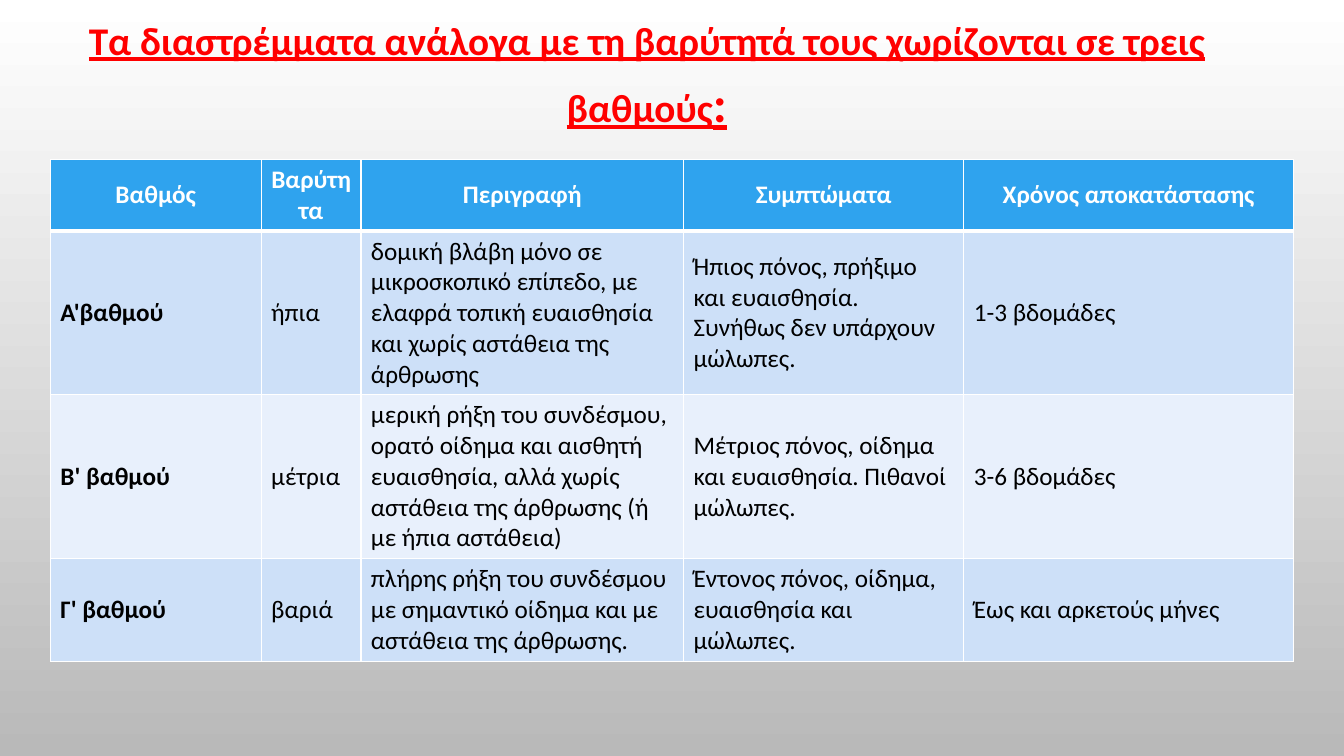
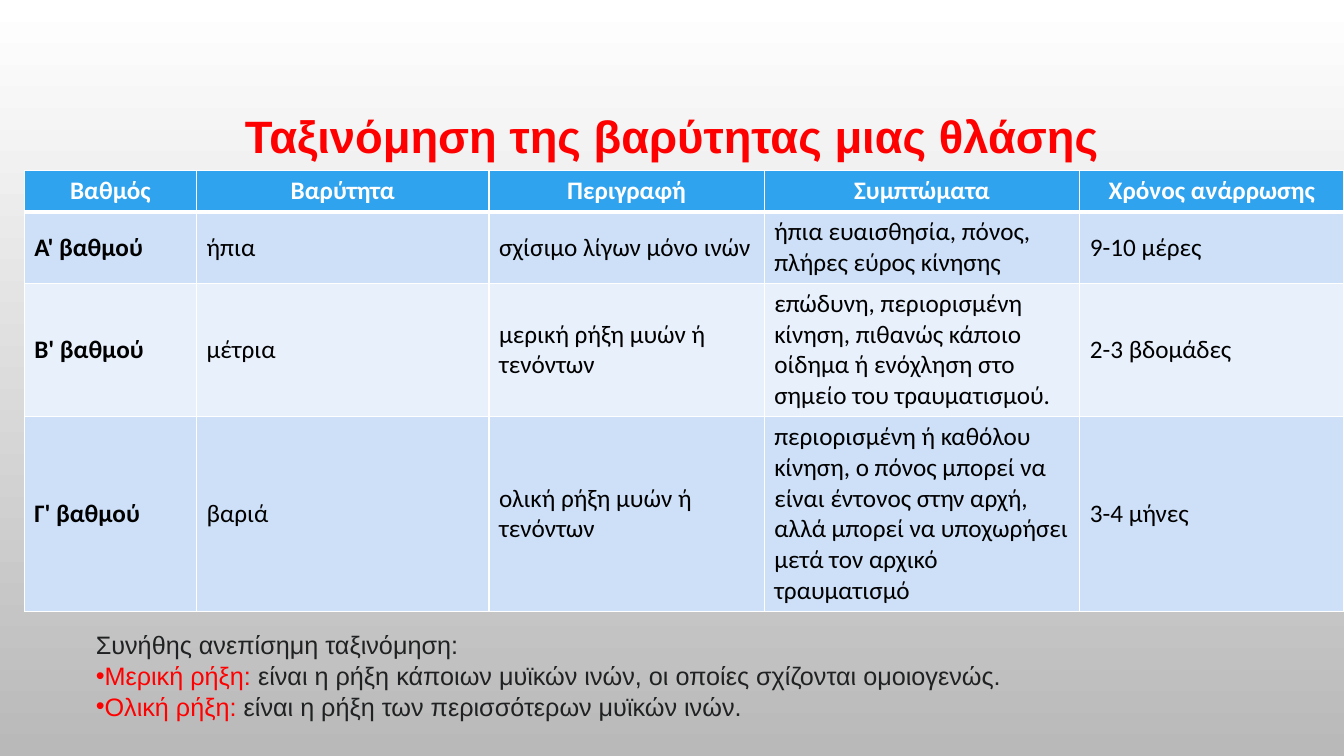
"""Build two slides that grade sprains and strains by severity."""
from lxml.etree import SubElement
from pptx import Presentation
from pptx.dml.color import RGBColor
from pptx.enum.text import MSO_ANCHOR, MSO_AUTO_SIZE, PP_ALIGN
from pptx.oxml.ns import qn
from pptx.util import Inches, Pt

WIDTH, HEIGHT = Inches(13.33), Inches(7.5)
COLOURS = {
    "red": "FF0000", "white": "FFFFFF", "black": "000000", "ink": "202122",
    "grey": "B9B9B9", "header": "2FA3EE", "odd": "CDE0F8", "even": "E8F0FC",
}
ROW_HEIGHT = 5.47
SPRAIN_COLUMNS = (2.09, 0.99, 3.2, 2.78, 3.27)
SPRAIN_ROWS = (
    ("Βαθμός", "Βαρύτητα", "Περιγραφή", "Συμπτώματα", "Χρόνος αποκατάστασης"),
    ("Α'βαθμού", "ήπια",
     "δομική βλάβη μόνο σε μικροσκοπικό επίπεδο, με ελαφρά τοπική ευαισθησία "
     "και χωρίς αστάθεια της άρθρωσης",
     "Ήπιος πόνος, πρήξιμο και ευαισθησία. Συνήθως δεν υπάρχουν μώλωπες.",
     "1-3 βδομάδες"),
    ("Β' βαθμού", "μέτρια",
     "μερική ρήξη του συνδέσμου, ορατό οίδημα και αισθητή ευαισθησία, αλλά "
     "χωρίς αστάθεια της άρθρωσης (ή με ήπια αστάθεια)",
     "Μέτριος πόνος, οίδημα και ευαισθησία. Πιθανοί μώλωπες.",
     "3-6 βδομάδες"),
    ("Γ' βαθμού", "βαριά",
     "πλήρης ρήξη του συνδέσμου με σημαντικό οίδημα και με αστάθεια της άρθρωσης.",
     "Έντονος πόνος, οίδημα, ευαισθησία και μώλωπες.",
     "Έως και αρκετούς μήνες"),
)
STRAIN_COLUMNS = (1.71, 2.9, 2.73, 3.13, 2.62)
STRAIN_ROWS = (
    ("Βαθμός", "Βαρύτητα", "Περιγραφή", "Συμπτώματα", "Χρόνος ανάρρωσης"),
    ("Α' βαθμού", "ήπια", "σχίσιμο λίγων μόνο ινών",
     "ήπια ευαισθησία, πόνος, πλήρες εύρος κίνησης", "9-10 μέρες"),
    ("Β' βαθμού", "μέτρια", "μερική ρήξη μυών ή τενόντων",
     "επώδυνη, περιορισμένη κίνηση, πιθανώς κάποιο οίδημα ή ενόχληση στο "
     "σημείο του τραυματισμού.", "2-3 βδομάδες"),
    ("Γ' βαθμού", "βαριά", "ολική ρήξη μυών ή τενόντων",
     "περιορισμένη ή καθόλου κίνηση, ο πόνος μπορεί να είναι έντονος στην "
     "αρχή, αλλά μπορεί να υποχωρήσει μετά τον αρχικό τραυματισμό",
     "3-4 μήνες"),
)
NOTES = (
    (("Συνήθης ανεπίσημη ταξινόμηση:", "ink"),),
    (("Μερική ρήξη: ", "red"),
     ("είναι η ρήξη κάποιων μυϊκών ινών, οι οποίες σχίζονται ομοιογενώς.", "ink")),
    (("Ολική ρήξη: ", "red"),
     ("είναι η ρήξη των περισσότερων μυϊκών ινών.", "ink")),
)


def colour(name):
    return RGBColor.from_string(COLOURS[name])


def area(left, top, width, height):
    return (round(WIDTH * left / 100), round(HEIGHT * top / 100),
            round(WIDTH * width / 100), round(HEIGHT * height / 100))


def place(shape, *shares):
    shape.left, shape.top, shape.width, shape.height = area(*shares)


def add_span(para, text, size, font, tint, bold=False, underline=False):
    span = para.add_run()
    span.text = text
    span.font.size, span.font.name = Pt(size), font
    span.font.bold, span.font.underline = bold, underline
    span.font.color.rgb = colour(tint)


def paint_background(master):
    fill = master.background.fill
    fill.gradient()
    fill.gradient_angle = 270
    for stop, position, tint in zip(fill.gradient_stops, (0, 1), ("white", "grey")):
        stop.position = position
        stop.color.rgb = colour(tint)


def add_title(page, shares, spans, font, underline=False):
    box = page.shapes.title
    place(box, *shares)
    frame = box.text_frame
    frame.auto_size = MSO_AUTO_SIZE.NONE
    frame.vertical_anchor = MSO_ANCHOR.MIDDLE
    para = frame.paragraphs[0]
    para.alignment = PP_ALIGN.CENTER
    para.line_spacing, para.space_after = 1.15, Pt(10)
    for text, size in spans:
        add_span(para, text, size, font, "red", True, underline)


def add_borders(cell, row):
    properties = cell._tc.get_or_add_tcPr()
    widths = {"L": 1, "R": 1, "T": 3 if row == 1 else 1, "B": 3 if row == 0 else 1}
    for index, (side, width) in enumerate(widths.items()):
        line = properties.makeelement(qn(f"a:ln{side}"), {"w": str(Pt(width))})
        fill = SubElement(line, qn("a:solidFill"))
        SubElement(fill, qn("a:srgbClr"), val=COLOURS["white"])
        properties.insert(index, line)


def fill_cell(cell, text, row, column):
    header = row == 0
    cell.fill.solid()
    cell.fill.fore_color.rgb = colour("header" if header else "odd" if row % 2 else "even")
    cell.vertical_anchor = MSO_ANCHOR.MIDDLE
    para = cell.text_frame.paragraphs[0]
    para.alignment = PP_ALIGN.CENTER if header else PP_ALIGN.LEFT
    add_span(para, text, 18, "Calibri", "white" if header else "black",
             header or column == 0)
    add_borders(cell, row)


def add_grade_table(page, left, top, columns, rows):
    width = sum(columns) * 100 / WIDTH.inches
    frame = page.shapes.add_table(
        len(rows), len(columns), *area(left, top, width, ROW_HEIGHT * len(rows)))
    for column, inches in zip(frame.table.columns, columns):
        column.width = Inches(inches)
    for row, texts in enumerate(rows):
        for column, text in enumerate(texts):
            fill_cell(frame.table.cell(row, column), text, row, column)


def set_bullet(para, bulleted):
    properties = para._p.get_or_add_pPr()
    properties.set("marL", "0")
    properties.set("indent", "0")
    if bulleted:
        SubElement(properties, qn("a:buFont"), typeface="Arial")
        SubElement(properties, qn("a:buChar"), char="•")
    else:
        SubElement(properties, qn("a:buNone"))


def add_notes(page, shares, lines):
    box = page.placeholders[1]
    place(box, *shares)
    frame = box.text_frame
    frame.auto_size = MSO_AUTO_SIZE.NONE
    for index, spans in enumerate(lines):
        para = frame.add_paragraph() if index else frame.paragraphs[0]
        para.line_spacing, para.space_before = Pt(22), Pt(0)
        set_bullet(para, index > 0)
        for text, tint in spans:
            add_span(para, text, 18, "Arial", tint)


def main():
    deck = Presentation()
    deck.slide_width, deck.slide_height = WIDTH, HEIGHT
    paint_background(deck.slide_master)

    page = deck.slides.add_slide(deck.slide_layouts[5])
    add_title(page, (5.62, -2.27, 85, 23.33), (
        ("Τα διαστρέμματα ανάλογα με τη βαρύτητά τους χωρίζονται σε τρεις βαθμούς", 28),
        (":", 36)), "Calibri", True)
    add_grade_table(page, 3.75, 21.07, SPRAIN_COLUMNS, SPRAIN_ROWS)

    page = deck.slides.add_slide(deck.slide_layouts[1])
    add_title(page, (7.5, 13.6, 85, 7.5),
              (("Ταξινόμηση της βαρύτητας μιας θλάσης", 32.4),), "Arial")
    add_grade_table(page, 1.8, 22.53, STRAIN_COLUMNS, STRAIN_ROWS)
    add_notes(page, (6.38, 82.53, 86.8, 13.47), NOTES)

    deck.save("out.pptx")


if __name__ == "__main__":
    main()
